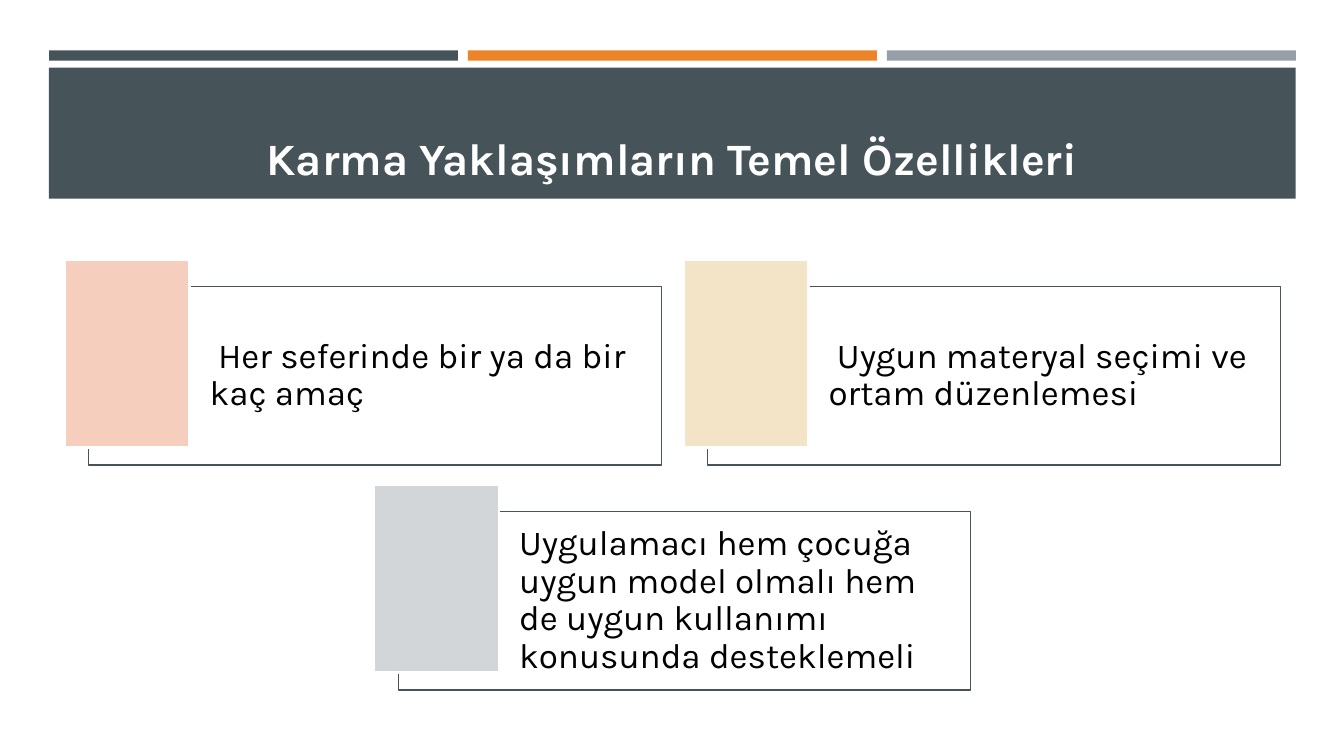
from lxml.etree import SubElement
from pptx import Presentation
from pptx.dml.color import RGBColor
from pptx.enum.shapes import MSO_SHAPE
from pptx.enum.text import MSO_ANCHOR, MSO_AUTO_SIZE, PP_ALIGN
from pptx.oxml.ns import qn
from pptx.util import Pt

COLORS = {
    "slate": "465359", "orange": "ED8428", "gray": "969FA7",
    "white": "FFFFFF", "black": "000000",
    "peach": "F6CEBE", "sand": "F3E4C8", "silver": "D3D6D9",
}
FONT = "Karla"

LEFT, WIDTH = 35, 890.6
BAR_TOP, BAR_HEIGHT, BAR_GAP = 36, 7.4, 7.2
BAR_WIDTH = (WIDTH - 2 * BAR_GAP) / 3
BAND_TOP, BAND_HEIGHT = 48.3, 93.6

GRID_LEFT, GRID_TOP = 46.1, 185.8
COLUMN_STEP, ROW_STEP = 442.1, 160.8
SWATCH_WIDTH, SWATCH_HEIGHT = 89.3, 133.9
CARD_WIDTH, CARD_HEIGHT = 409, 127.6
CARD_SHIFT_X, CARD_SHIFT_Y = 17.3, 18.7

CARDS = [  # column, row, swatch colour, text
    (0, 0, "peach", " Her seferinde bir ya da bir kaç amaç"),
    (1, 0, "sand", " Uygun materyal seçimi ve ortam düzenlemesi"),
    (0.5, 1, "silver", "Uygulamacı hem çocuğa uygun model olmalı hem de "
                       "uygun kullanımı konusunda desteklemeli"),
]


def rgb(name):
    return RGBColor.from_string(COLORS[name])


def write(frame, text, size, color, bold=False, align=PP_ALIGN.LEFT,
          anchor=MSO_ANCHOR.MIDDLE, insets=(7.2, 3.6, 7.2, 3.6), spacing=1.0):
    """Fill a text frame; insets run left, top, right, bottom."""
    frame.word_wrap = True
    frame.auto_size = MSO_AUTO_SIZE.NONE
    frame.vertical_anchor = anchor
    (frame.margin_left, frame.margin_top,
     frame.margin_right, frame.margin_bottom) = map(Pt, insets)
    para = frame.paragraphs[0]
    para.alignment = align
    para.line_spacing = spacing
    span = para.add_run()
    span.text = text
    span.font.name = FONT
    span.font.size = Pt(size)
    span.font.bold = bold
    span.font.color.rgb = rgb(color)


class SlideBuilder:
    def __init__(self, page):
        self.page = page

    def rectangle(self, left, top, width, height, fill, line=None,
                  line_width=1, opacity=None):
        box = self.page.shapes.add_shape(
            MSO_SHAPE.RECTANGLE, Pt(left), Pt(top), Pt(width), Pt(height))
        box.shadow.inherit = False
        box.fill.solid()
        box.fill.fore_color.rgb = rgb(fill)
        if opacity is not None:
            color = box.element.spPr.find(qn("a:solidFill"))[0]
            SubElement(color, qn("a:alpha"), val=str(opacity * 1000))
        if line:
            box.line.color.rgb = rgb(line)
            box.line.width = Pt(line_width)
        else:
            box.line.fill.background()
        return box

    def title(self, text):
        """Place the title and raise it above the band."""
        box = self.page.shapes.title
        box.left, box.top, box.width, box.height = map(Pt, (46.1, 55.4, 868.3, 79.9))
        write(box.text_frame, text, 32, "white", bold=True,
              align=PP_ALIGN.CENTER, anchor=MSO_ANCHOR.BOTTOM)
        box.element.getparent().append(box.element)

    def card(self, column, row, color, text):
        left = GRID_LEFT + column * COLUMN_STEP
        top = GRID_TOP + row * ROW_STEP
        frame_box = self.rectangle(left + CARD_SHIFT_X, top + CARD_SHIFT_Y,
                                   CARD_WIDTH, CARD_HEIGHT, "white",
                                   line="slate", opacity=40)
        write(frame_box.text_frame, text, 25, "black",
              insets=(86.4, 7.2, 7.2, 7.2), spacing=0.9)
        self.rectangle(left, top, SWATCH_WIDTH, SWATCH_HEIGHT, color,
                       line="white", line_width=1.75)


def main():
    deck = Presentation()
    deck.slide_width, deck.slide_height = Pt(960), Pt(540)
    builder = SlideBuilder(deck.slides.add_slide(deck.slide_layouts[5]))

    for index, color in enumerate(("slate", "orange", "gray")):
        builder.rectangle(LEFT + index * (BAR_WIDTH + BAR_GAP), BAR_TOP,
                          BAR_WIDTH, BAR_HEIGHT, color)
    builder.rectangle(LEFT, BAND_TOP, WIDTH, BAND_HEIGHT, "slate")
    builder.title("Karma Yaklaşımların Temel Özellikleri")
    for card in CARDS:
        builder.card(*card)

    deck.save("out.pptx")


if __name__ == "__main__":
    main()
